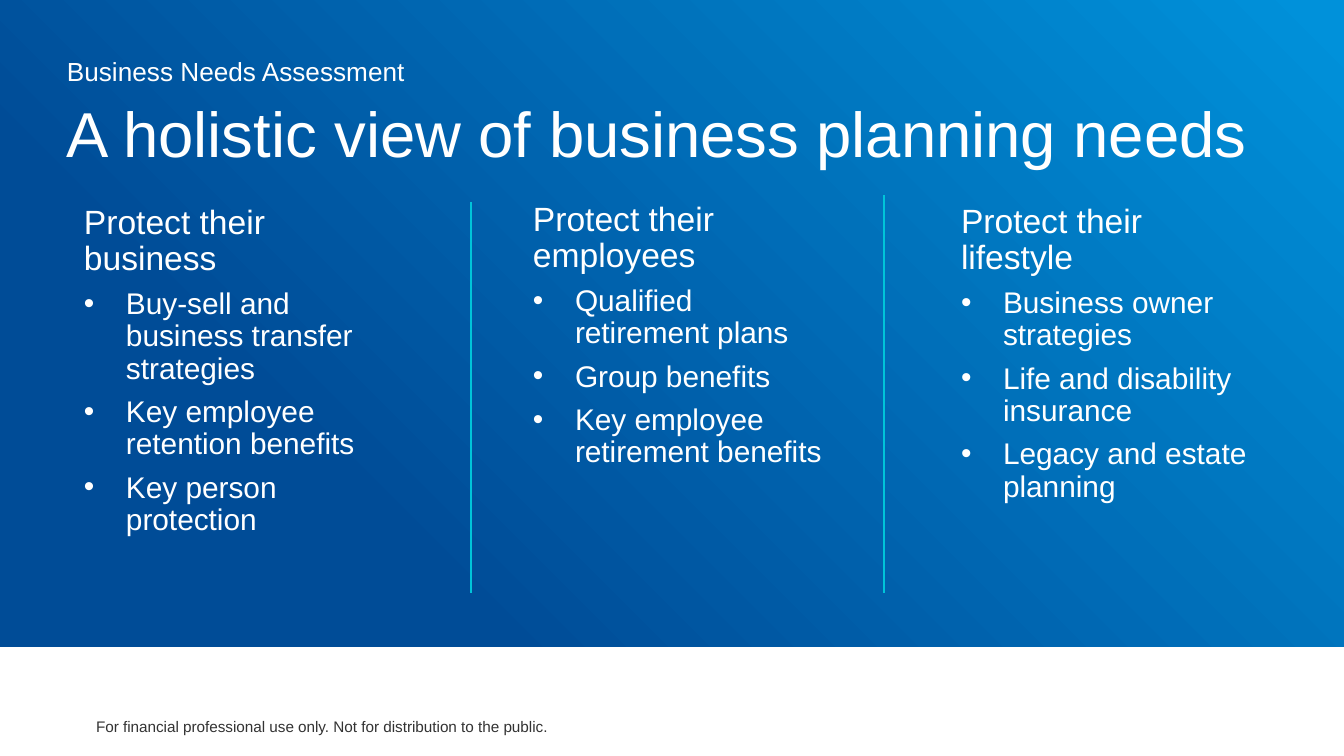
from lxml.etree import SubElement
from pptx import Presentation
from pptx.dml.color import RGBColor
from pptx.enum.shapes import MSO_CONNECTOR, MSO_SHAPE
from pptx.enum.text import MSO_ANCHOR, PP_ALIGN
from pptx.oxml.ns import qn
from pptx.util import Pt

NAVY = RGBColor(0x00, 0x4C, 0x97)
SKY = RGBColor(0x00, 0x91, 0xDA)
TEAL = RGBColor(0x00, 0xC4, 0xD9)
WHITE = RGBColor(0xFF, 0xFF, 0xFF)
GRAY = RGBColor(0x33, 0x33, 0x33)
FONT = "Arial"

KICKER = "Business Needs Assessment"
TITLE = "A holistic view of business planning needs"
FOOTER = "For financial professional use only. Not for distribution to the public."

# (left, top, width), heading, bullets
COLUMNS = [
    ((44, 145, 396), "Protect their business",
     ["Buy-sell and business transfer strategies",
      "Key employee retention benefits",
      "Key person protection"]),
    ((493, 142, 370), "Protect their employees",
     ["Qualified retirement plans",
      "Group benefits",
      "Key employee retirement benefits"]),
    ((921, 144, 370), "Protect their lifestyle",
     ["Business owner strategies",
      "Life and disability insurance",
      "Legacy and estate planning"]),
]
COLUMN_HEIGHT = 395
DIVIDERS = [(471, 202), (884, 195)]  # x, top
DIVIDER_BOTTOM = 593
BULLET_INDENT = 42


def px(n):
    return round(n * 914400 / 134.4)


def add_text_box(slide, box, insets):
    """Add a wrapping text box; insets are left, top, right, bottom."""
    tf = slide.shapes.add_textbox(*map(px, box)).text_frame
    tf.word_wrap = True
    (tf.margin_left, tf.margin_top,
     tf.margin_right, tf.margin_bottom) = map(px, insets)
    return tf


def add_line(tf, text, size, color=WHITE, bullet=False):
    """Write into the empty first paragraph, or append a new one."""
    p = tf.paragraphs[0] if not tf.text else tf.add_paragraph()
    p.text = text
    if bullet:
        pPr = p._p.get_or_add_pPr()
        pPr.set("marL", str(px(BULLET_INDENT)))
        pPr.set("indent", str(-px(BULLET_INDENT)))
        SubElement(pPr, qn("a:buFont")).set("typeface", FONT)
        SubElement(pPr, qn("a:buChar")).set("char", "•")
    for r in p.runs:
        r.font.name = FONT
        r.font.size = Pt(size)
        r.font.color.rgb = color
    return p


def add_background(slide):
    sp = slide.shapes.add_shape(MSO_SHAPE.RECTANGLE, *map(px, (0, -13, 1344, 660)))
    sp.shadow.inherit = False
    sp.line.fill.background()
    sp.fill.gradient()
    sp.fill.gradient_angle = 45
    stops = zip(sp.fill.gradient_stops, [(0.25, NAVY), (0.98, SKY)])
    for stop, (position, color) in stops:
        stop.position = position
        stop.color.rgb = color


def add_title(slide):
    tf = add_text_box(slide, (67, 61, 1210, 114), (0, 0, 0, 0))
    for text, size in [(KICKER, 14), (TITLE, 34)]:
        p = add_line(tf, text, size)
        p.line_spacing = 0.8
    p.space_before = Pt(12)


def add_column(slide, box, heading, bullets):
    tf = add_text_box(slide, (*box, COLUMN_HEIGHT), (40, 60, 40, 40))
    add_line(tf, heading, 18)
    for text in bullets:
        add_line(tf, text, 16, bullet=True)
    for p in tf.paragraphs:
        p.line_spacing = 0.9
        p.space_after = Pt(6)


def add_divider(slide, x, top):
    line = slide.shapes.add_connector(
        MSO_CONNECTOR.STRAIGHT, *map(px, (x, top, x, DIVIDER_BOTTOM)))
    line.line.color.rgb = TEAL
    line.line.width = Pt(0.75)
    SubElement(line._element.spPr, qn("a:effectLst"))


def add_footer(slide):
    tf = add_text_box(slide, (-69, 706, 782, 40), (10, 5, 10, 5))
    tf.vertical_anchor = MSO_ANCHOR.MIDDLE
    add_line(tf, FOOTER, 8.2, GRAY).alignment = PP_ALIGN.CENTER


def main():
    prs = Presentation()
    prs.slide_width, prs.slide_height = px(1344), px(756)
    slide = prs.slides.add_slide(prs.slide_layouts[6])
    add_background(slide)
    add_title(slide)
    for column in COLUMNS:
        add_column(slide, *column)
    for divider in DIVIDERS:
        add_divider(slide, *divider)
    add_footer(slide)
    prs.save("out.pptx")


if __name__ == "__main__":
    main()
